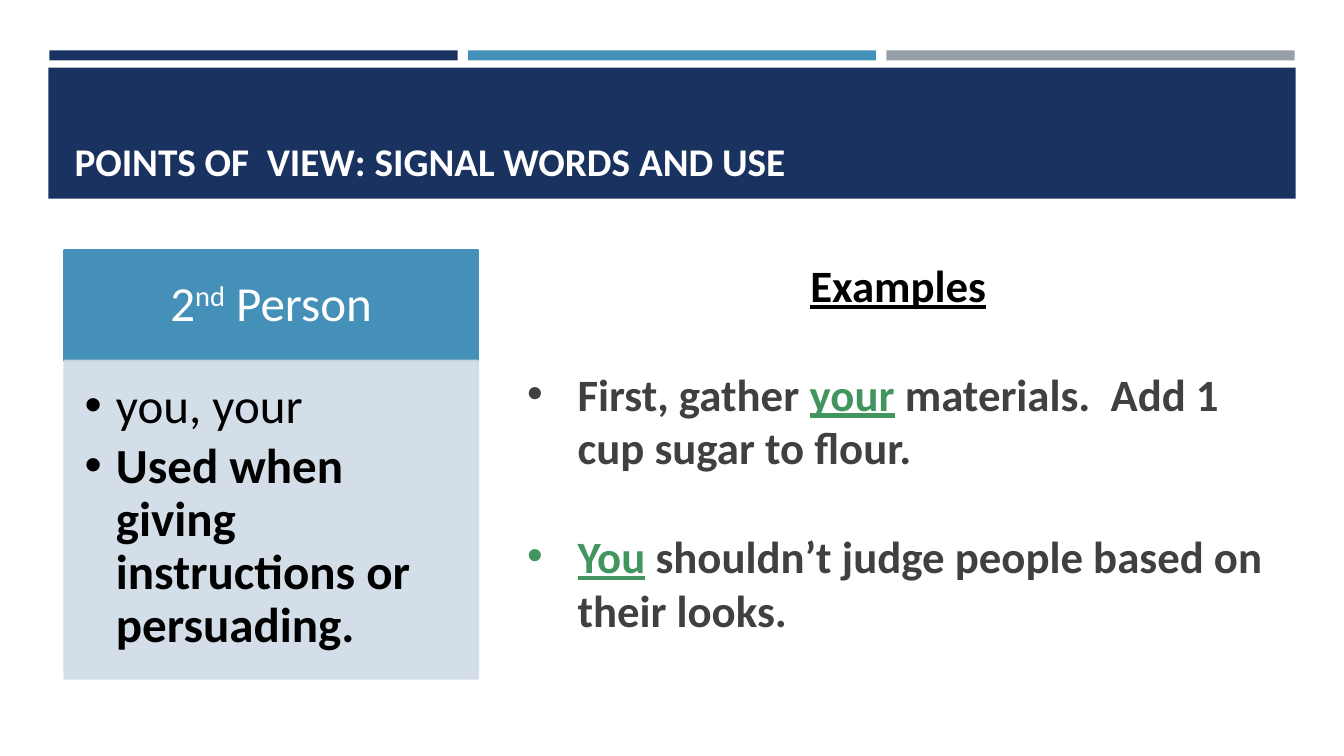
"""Build the slide on second-person point of view."""
from lxml.etree import SubElement
from pptx import Presentation
from pptx.dml.color import RGBColor
from pptx.enum.shapes import MSO_SHAPE
from pptx.enum.text import MSO_ANCHOR, MSO_AUTO_SIZE, PP_ALIGN
from pptx.oxml.ns import qn
from pptx.util import Inches, Pt

NAVY = RGBColor(0x1A, 0x32, 0x60)
BLUE = RGBColor(0x45, 0x90, 0xB8)
GRAY = RGBColor(0x96, 0x9F, 0xA7)
PALE = RGBColor(0xCF, 0xDB, 0xE6)
GREEN = RGBColor(0x42, 0x95, 0x5F)
CHARCOAL = RGBColor(0x40, 0x40, 0x40)
BLACK = RGBColor(0, 0, 0)
WHITE = RGBColor(0xFF, 0xFF, 0xFF)

TITLE = {"size": Pt(28), "bold": True, "color": WHITE}
CARD_HEAD = {"size": Pt(35), "color": WHITE}
CARD_BODY = {"size": Pt(35), "color": BLACK}
CARD_STRONG = CARD_BODY | {"bold": True}
HEADING = {"size": Pt(32), "bold": True, "underline": True, "color": BLACK}
EXAMPLE = {"size": Pt(32), "bold": True, "color": CHARCOAL}
SIGNAL = EXAMPLE | {"underline": True, "color": GREEN}


def set_alpha(fill_parent, percent):
    """Make the solid colour under an element partly transparent."""
    color = fill_parent.find(qn("a:solidFill"))[0]
    SubElement(color, qn("a:alpha"), val=str(percent * 1000))


def add_block(slide, box, color, outlined=False, opacity=100):
    """Add a flat rectangle and return it."""
    block = slide.shapes.add_shape(MSO_SHAPE.RECTANGLE, *map(Inches, box))
    block.shadow.inherit = False
    block.fill.solid()
    block.fill.fore_color.rgb = color
    if outlined:
        block.line.color.rgb = color
        block.line.width = Pt(1.75)
    else:
        block.line.fill.background()
    if opacity < 100:
        properties = block.fill._xPr
        set_alpha(properties, opacity)
        if outlined:
            set_alpha(properties.find(qn("a:ln")), opacity)
    return block


def set_frame(frame, anchor, insets=(0.1, 0.05, 0.1, 0.05)):
    """Set wrapping, anchor and insets of a text frame."""
    sides = ("margin_left", "margin_top", "margin_right", "margin_bottom")
    settings = dict(zip(sides, map(Inches, insets)))
    settings |= {"word_wrap": True, "vertical_anchor": anchor}
    for name, value in settings.items():
        setattr(frame, name, value)


def add_run(paragraph, text, style, baseline=0):
    """Append a styled run to a paragraph."""
    run = paragraph.add_run()
    run.text = text
    run.font.name = "Calibri"
    for name, value in style.items():
        if name == "color":
            run.font.color.rgb = value
        else:
            setattr(run.font, name, value)
    if baseline:
        run._r.get_or_add_rPr().set("baseline", str(baseline * 1000))


def add_paragraph(frame, runs, layout, indent=0):
    """Fill the first paragraph or a new one, with a bullet if indented."""
    first = frame.paragraphs[0]
    paragraph = frame.add_paragraph() if first.runs else first
    for name, value in ({"alignment": PP_ALIGN.LEFT} | layout).items():
        setattr(paragraph, name, value)
    if indent:
        properties = paragraph._p.get_or_add_pPr()
        properties.set("marL", str(Inches(indent)))
        properties.set("indent", str(-Inches(indent)))
        SubElement(properties, qn("a:buFont"), typeface="Arial")
        SubElement(properties, qn("a:buChar"), char="•")
    for run in runs:
        add_run(paragraph, *run)


def add_banner(slide):
    """Add the three accent bars and the title band."""
    for column, color in enumerate((NAVY, BLUE, GRAY)):
        add_block(slide, (0.49 + 4.15 * column, 0.5, 4.05, 0.1), color)
    band = add_block(slide, (0.48, 0.67, 12.37, 1.3), NAVY).text_frame
    set_frame(band, MSO_ANCHOR.BOTTOM, (0.26, 0.15, 0.25, 0.14))
    add_paragraph(band, [("POINTS OF  VIEW: SIGNAL WORDS AND USE", TITLE)], {})


def add_person_card(slide):
    """Add the card that names the person, its words and its use."""
    head = add_block(slide, (0.64, 2.48, 4.1, 1.1), BLUE, True).text_frame
    set_frame(head, MSO_ANCHOR.MIDDLE, (0.27, 0.16, 0.27, 0.16))
    name = [("2", CARD_HEAD), ("nd", CARD_HEAD, 30), (" Person", CARD_HEAD)]
    add_paragraph(head, name, {"alignment": PP_ALIGN.CENTER, "line_spacing": 0.9})

    body = add_block(slide, (0.64, 3.58, 4.1, 3.15), PALE, True, 90).text_frame
    set_frame(body, MSO_ANCHOR.TOP, (0.2, 0.2, 0.27, 0.31))
    layout = {"line_spacing": 0.9, "space_after": Pt(5)}
    for run in (("you, your", CARD_BODY),
                ("Used when giving instructions or persuading.", CARD_STRONG)):
        add_paragraph(body, [run], layout, 0.31)


def add_examples(slide):
    """Add the heading and the bulleted example sentences."""
    box = map(Inches, (5.13, 2.51, 7.56, 3.87))
    examples = slide.shapes.add_textbox(*box).text_frame
    set_frame(examples, MSO_ANCHOR.TOP)
    examples.auto_size = MSO_AUTO_SIZE.SHAPE_TO_FIT_TEXT
    add_paragraph(examples, [("Examples", HEADING)], {"alignment": PP_ALIGN.CENTER})
    sentences = (
        [("First, gather ", EXAMPLE), ("your", SIGNAL),
         (" materials.  Add 1 cup sugar to flour.", EXAMPLE)],
        [("You", SIGNAL),
         (" shouldn’t judge people based on their looks.", EXAMPLE)],
    )
    for sentence in sentences:
        add_paragraph(examples, sentence, {"space_before": Pt(39)}, 0.5)


def main():
    """Build and save the slide."""
    deck = Presentation()
    deck.slide_width, deck.slide_height = Inches(13.33), Inches(7.5)
    slide = deck.slides.add_slide(deck.slide_layouts[6])
    add_banner(slide)
    add_person_card(slide)
    add_examples(slide)
    deck.save("out.pptx")


if __name__ == "__main__":
    main()
